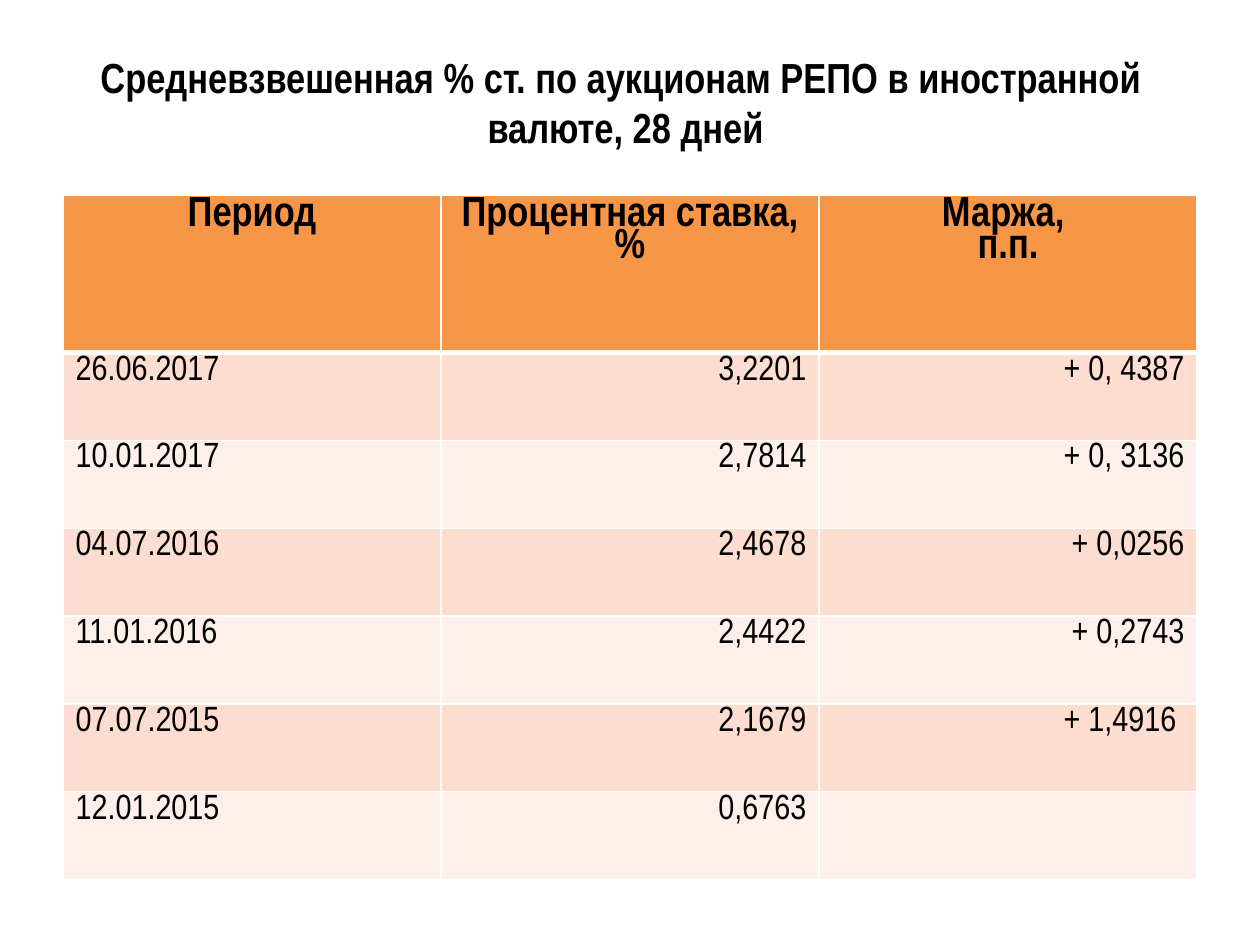
from dataclasses import dataclass

from lxml import etree
from pptx import Presentation
from pptx.dml.color import RGBColor
from pptx.enum.text import MSO_ANCHOR, PP_ALIGN
from pptx.oxml.ns import qn
from pptx.util import Inches, Pt

LEFT, CENTER, RIGHT = PP_ALIGN.LEFT, PP_ALIGN.CENTER, PP_ALIGN.RIGHT
MIDDLE = MSO_ANCHOR.MIDDLE
FONT = "Arial Narrow"
COLORS = {
    "text": "000000",
    "head": "F79646",
    "odd": "FCDDCF",
    "even": "FDEFE9",
    "line": "FFFFFF",
}
TITLE = "Средневзвешенная % ст. по аукционам РЕПО в иностранной \vвалюте, 28 дней"
HEADS = ("Период", "Процентная ставка, %", "Маржа, \nп.п.")
HEAD_H, TABLE_H = 1.25, 5.43


@dataclass
class Rate:
    date: str
    value: str
    margin: str = ""


RATES = [
    Rate("26.06.2017", "3,2201", "+ 0, 4387"),
    Rate("10.01.2017", "2,7814", "+ 0, 3136"),
    Rate("04.07.2016", "2,4678", "+ 0,0256"),
    Rate("11.01.2016", "2,4422", "+ 0,2743"),
    Rate("07.07.2015", "2,1679", "+ 1,4916 "),
    Rate("12.01.2015", "0,6763"),
]


def write(frame, text: str, *, size: float, bold: bool = False,
          align=LEFT, spacing: float = 1.0) -> None:
    frame.text = text
    for para in frame.paragraphs:
        para.alignment = align
        para.line_spacing = spacing
        para.font.size = Pt(size)
        for run in para.runs:
            font = run.font
            font.name, font.size, font.bold = FONT, Pt(size), bold
            font.color.rgb = RGBColor.from_string(COLORS["text"])


def border(cell, top: float, bottom: float) -> None:
    """Draw the four cell edges, with widths in points; call before the fill."""
    props = cell._tc.get_or_add_tcPr()
    for tag, width in (("lnL", 1), ("lnR", 1), ("lnT", top), ("lnB", bottom)):
        line = etree.SubElement(props, qn(f"a:{tag}"), w=str(Pt(width)))
        fill = etree.SubElement(line, qn("a:solidFill"))
        etree.SubElement(fill, qn("a:srgbClr"), val=COLORS["line"])


def paint(cell, color: str) -> None:
    cell.fill.solid()
    cell.fill.fore_color.rgb = RGBColor.from_string(COLORS[color])


def add_title(slide) -> None:
    box = slide.shapes.add_textbox(Inches(0.2), Inches(0.3), Inches(9.53), Inches(1.01))
    frame = box.text_frame
    frame.word_wrap = True
    frame.vertical_anchor = MIDDLE
    write(frame, TITLE, size=24, bold=True, align=CENTER)


def add_rates(slide) -> None:
    count = len(RATES)
    table = slide.shapes.add_table(
        count + 1, len(HEADS), Inches(0.5), Inches(1.55), Inches(9), Inches(TABLE_H)
    ).table
    for row in table.rows:
        row.height = Inches((TABLE_H - HEAD_H) / count)
    table.rows[0].height = Inches(HEAD_H)

    for col, text in enumerate(HEADS):
        cell = table.cell(0, col)
        border(cell, 1, 3)
        paint(cell, "head")
        write(cell.text_frame, text, size=24, bold=True, align=CENTER, spacing=0.8)

    for num, rate in enumerate(RATES, 1):
        for col, text in enumerate((rate.date, rate.value, rate.margin)):
            cell = table.cell(num, col)
            border(cell, 3 if num == 1 else 1, 1)
            paint(cell, "odd" if num % 2 else "even")
            write(cell.text_frame, text, size=20,
                  align=RIGHT if col else LEFT, spacing=0.8)


def main() -> None:
    deck = Presentation()
    deck.slide_width, deck.slide_height = Inches(10), Inches(7.5)
    slide = deck.slides.add_slide(deck.slide_layouts[6])
    add_title(slide)
    add_rates(slide)
    deck.save("out.pptx")


if __name__ == "__main__":
    main()
